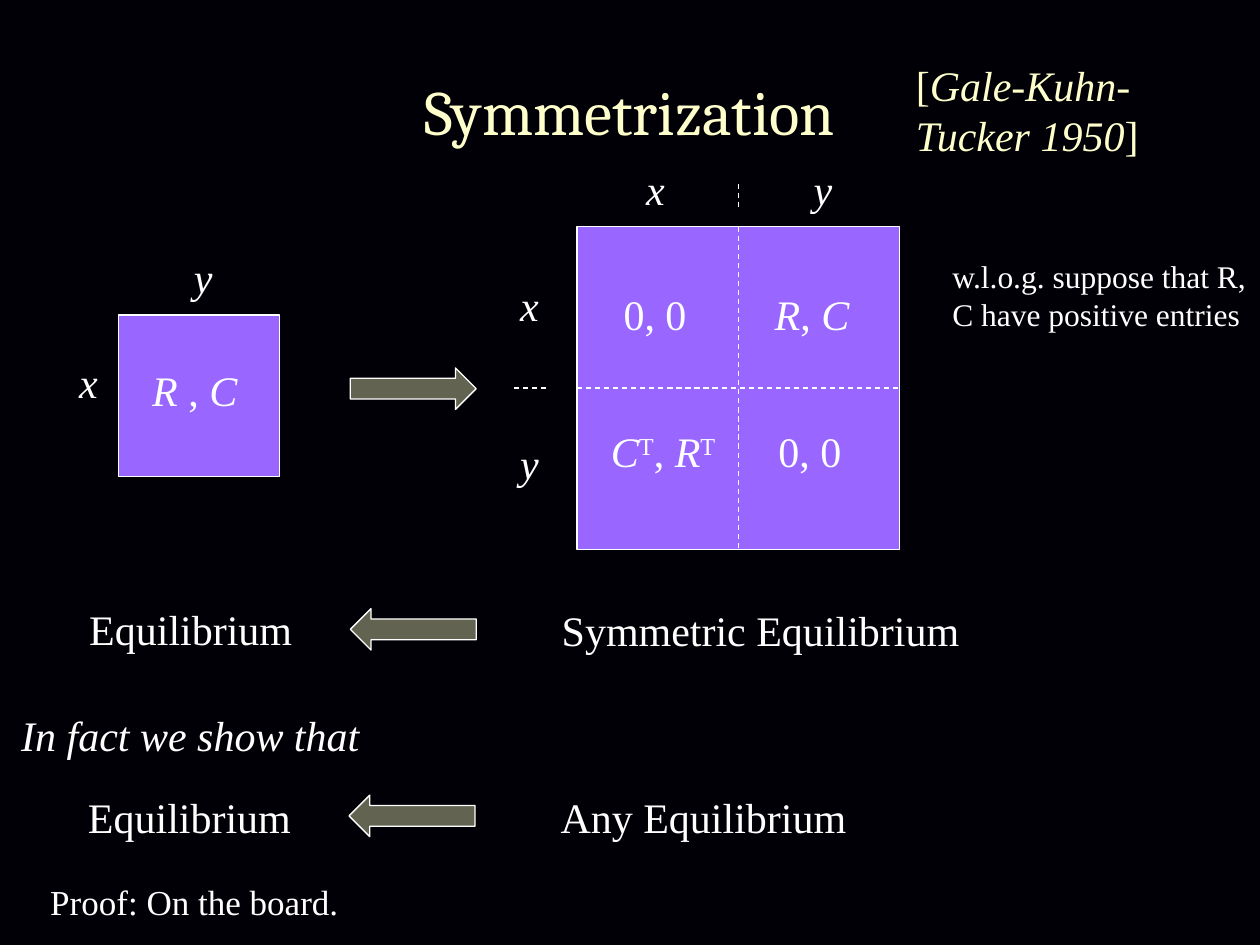
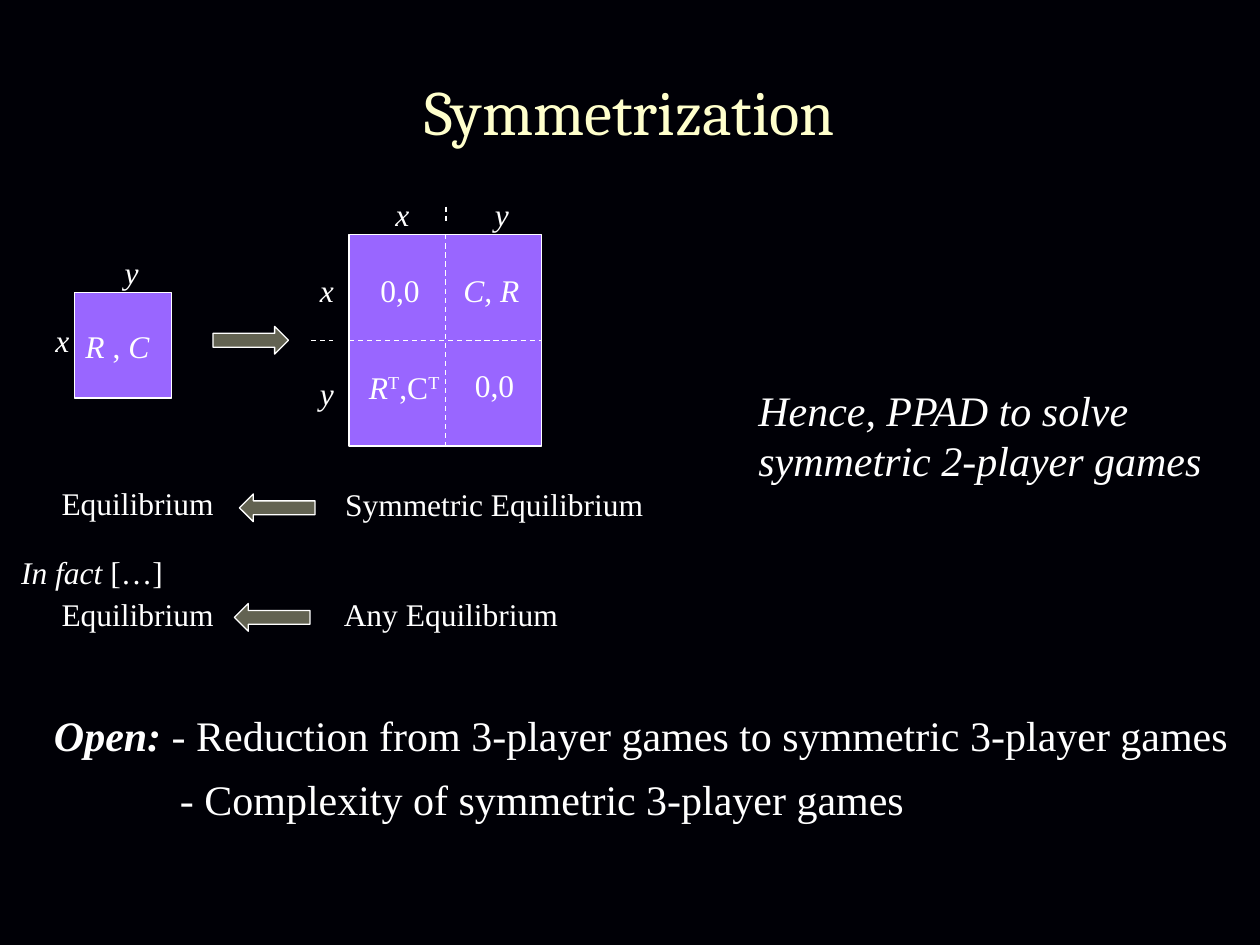
"""Build two slides on turning a two-player game into a symmetric one."""
from lxml.etree import SubElement
from pptx import Presentation
from pptx.dml.color import RGBColor
from pptx.enum.dml import MSO_LINE
from pptx.enum.shapes import MSO_CONNECTOR, MSO_SHAPE
from pptx.enum.text import MSO_ANCHOR, PP_ALIGN
from pptx.oxml.ns import qn
from pptx.util import Inches, Pt

COLORS = {"night": "000006", "cream": "FFFFCC", "white": "FFFFFF", "violet": "9966FF"}
BODY_FONT = "Times New Roman"
TITLE_FONT = "Cambria"


def write(slide, runs, at, size=24, color="white", font=BODY_FONT, wrap=False,
          align=PP_ALIGN.LEFT, anchor=MSO_ANCHOR.TOP):
    """Write (text, style) runs; style letters are i italic, b bold, ^ superscript."""
    frame = slide.shapes.add_textbox(*map(Inches, at)).text_frame
    frame.word_wrap = wrap
    frame.vertical_anchor = anchor
    paragraph = frame.paragraphs[0]
    paragraph.alignment = align
    for text, style in [(runs, "")] if isinstance(runs, str) else runs:
        run = paragraph.add_run()
        run.text = text
        run.font.name = font
        run.font.size = Pt(size)
        run.font.color.rgb = RGBColor.from_string(COLORS[color])
        run.font.italic = "i" in style
        run.font.bold = "b" in style
        if "^" in style:
            run._r.get_or_add_rPr().set("baseline", "30000")


GAME = [("R", "i"), (" , ", ""), ("C", "i")]

DIAGRAMS = [
    {
        "size": 24,
        "game": (0.94, 2.5, 1.28, 1.28),
        "matrix": (4.58, 1.8, 2.56, 2.56),
        "ticks": [(4.08, 3.08, 4.36, 3.08), (5.86, 1.46, 5.86, 1.66)],
        "arrow_size": (1, 0.33),
        "arrows": [(2.78, 2.92, 0), (2.78, 4.83, 180), (2.77, 6.31, 180)],
        "label_size": (0.42, 0.51),
        "labels": [("x", 0.53, 2.78), ("y", 1.44, 1.95), ("x", 4.03, 2.17),
                   ("y", 4.03, 3.42), ("x", 5.03, 1.25), ("y", 6.36, 1.25)],
        "texts": [
            (GAME, (1.11, 2.84, 1, 0.51)),
            ("0, 0", (4.85, 2.24, 0.71, 0.5)),
            ([("R", "i"), (", ", ""), ("C", "i")], (6.05, 2.24, 0.83, 0.5)),
            ([("C", "i"), ("T", "^"), (", ", ""), ("R", "i"), ("T", "^")],
             (4.75, 3.33, 1.12, 0.5)),
            ("0, 0", (6.08, 3.33, 0.71, 0.5)),
            ("Equilibrium", (0.61, 4.74, 1.83, 0.51)),
            ("Symmetric Equilibrium", (4.36, 4.75, 3.39, 0.51)),
            ([("In fact we show that", "i")], (0.07, 5.58, 3.02, 0.5)),
            ("Equilibrium", (0.6, 6.23, 1.83, 0.51)),
            ("Any Equilibrium", (4.35, 6.23, 2.51, 0.51)),
        ],
    },
    {
        "size": 18,
        "game": (0.59, 2.32, 0.77, 0.84),
        "matrix": (2.77, 1.86, 1.53, 1.68),
        "ticks": [(2.47, 2.7, 2.64, 2.7), (3.54, 1.64, 3.54, 1.77)],
        "arrow_size": (0.6, 0.22),
        "arrows": [(1.69, 2.59, 0), (1.9, 3.92, 180), (1.86, 4.79, 180)],
        "label_size": (0.25, 0.71),
        "labels": [("x", 0.34, 2.5), ("y", 0.89, 1.96), ("x", 2.44, 2.1),
                   ("y", 2.44, 2.92), ("x", 3.04, 1.5), ("y", 3.83, 1.5)],
        "texts": [
            (GAME, (0.58, 2.55, 0.81, 0.4)),
            ("0,0", (2.92, 2.1, 0.52, 0.4)),
            ([("C, R", "i")], (3.58, 2.1, 0.69, 0.4)),
            ([("R", "i"), ("T", "^"), (",C", ""), ("T", "^")], (2.83, 2.87, 0.81, 0.4)),
            ("0,0", (3.67, 2.86, 0.52, 0.4)),
            ("Equilibrium", (0.39, 3.79, 1.42, 0.4)),
            ("Symmetric Equilibrium", (2.64, 3.8, 2.59, 0.4)),
            ([("In fact ", "i"), ("[…]", "")], (0.07, 4.34, 1.36, 0.4)),
            ("Equilibrium", (0.39, 4.67, 1.42, 0.4)),
            ("Any Equilibrium", (2.63, 4.67, 1.92, 0.4)),
        ],
    },
]

deck = Presentation()
deck.slide_width, deck.slide_height = Inches(10), Inches(7.5)
slides = []

for diagram in DIAGRAMS:
    slide = deck.slides.add_slide(deck.slide_layouts[6])
    slides.append(slide)
    slide.background.fill.solid()
    slide.background.fill.fore_color.rgb = RGBColor.from_string(COLORS["night"])
    write(slide, "Symmetrization", (0.33, 0.25, 9.34, 1.25), size=36, color="cream",
          font=TITLE_FONT, wrap=True, align=PP_ALIGN.CENTER, anchor=MSO_ANCHOR.MIDDLE)

    outlined = [(MSO_SHAPE.RECTANGLE, diagram[part], 0, "violet") for part in ("game", "matrix")]
    outlined += [(MSO_SHAPE.RIGHT_ARROW, (left, top, *diagram["arrow_size"]), turn, "cream")
                 for left, top, turn in diagram["arrows"]]
    for preset, at, turn, color in outlined:
        block = slide.shapes.add_shape(preset, *map(Inches, at))
        block.shadow.inherit = False
        block.rotation = turn
        block.fill.solid()
        block.fill.fore_color.rgb = RGBColor.from_string(COLORS[color])
        block.line.color.rgb = RGBColor.from_string(COLORS["white"])
        block.line.width = Pt(0.75)
        if preset == MSO_SHAPE.RIGHT_ARROW:
            tint = block._element.spPr.find(qn("a:solidFill"))[0]
            SubElement(tint, qn("a:alpha")).set("val", "39000")
        elif at == diagram["matrix"]:
            matrix = block

    left, top, width, height = diagram["matrix"]
    middle_x, middle_y = left + width / 2, top + height / 2
    dashes = [((middle_x, top, middle_x, top + height), (0, 2)),
              ((left, middle_y, left + width, middle_y), (1, 3))]
    dashes += [(ends, None) for ends in diagram["ticks"]]
    for ends, sides in dashes:
        dash = slide.shapes.add_connector(MSO_CONNECTOR.STRAIGHT, *map(Inches, ends))
        if sides:
            dash.begin_connect(matrix, sides[0])
            dash.end_connect(matrix, sides[1])
        dash.line.color.rgb = RGBColor.from_string(COLORS["white"])
        dash.line.width = Pt(0.75)
        dash.line.dash_style = MSO_LINE.DASH
        SubElement(dash._element.spPr, qn("a:effectLst"))

    for strategy, left, top in diagram["labels"]:
        write(slide, [(strategy, "i")], (left, top, *diagram["label_size"]),
              size=diagram["size"], wrap=True)
    for runs, at in diagram["texts"]:
        write(slide, runs, at, size=diagram["size"])

construction, consequences = slides
write(construction, [("[", ""), ("Gale-Kuhn-Tucker 1950", "i"), ("]", "")],
      (7.17, 0.42, 2.33, 0.91), color="cream", wrap=True)
write(construction, "w.l.o.g. suppose that R, C have positive entries",
      (7.46, 1.99, 2.62, 0.71), size=18, wrap=True)
write(construction, "Proof: On the board.", (0.3, 6.94, 2.51, 0.44), size=20)

write(consequences, [("Hence, PPAD to solve symmetric 2-player games", "i")],
      (5.92, 3, 4.08, 0.91), wrap=True)
write(consequences,
      [("Open:", "bi"), (" - Reduction from 3-player games to symmetric 3-player games", "")],
      (0.33, 5.58, 9.67, 0.51), wrap=True)
write(consequences, "- Complexity of symmetric 3-player games", (1.33, 6.09, 7.54, 0.5), wrap=True)

deck.save("out.pptx")
